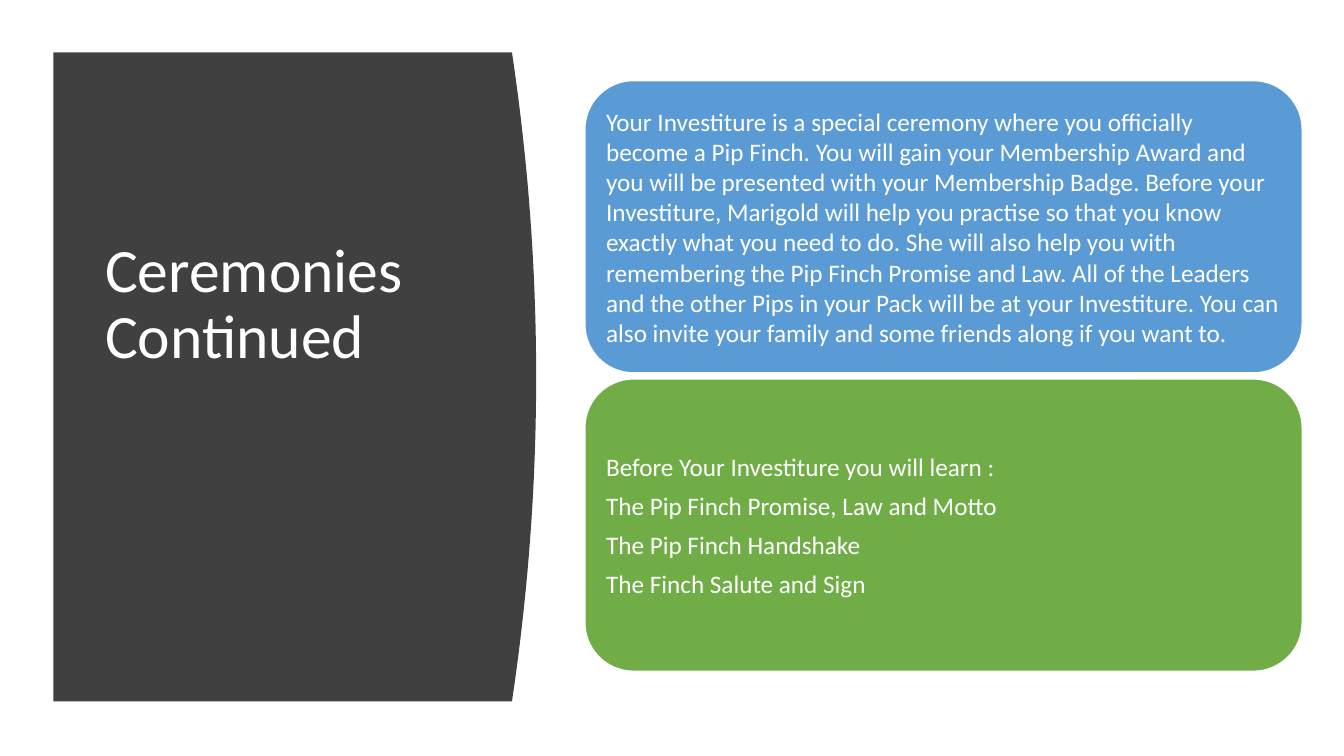
"""Build the "Ceremonies Continued" slide with a curved title panel and two cards."""
from pptx import Presentation
from pptx.dml.color import RGBColor
from pptx.enum.shapes import MSO_SHAPE
from pptx.enum.text import MSO_ANCHOR, MSO_AUTO_SIZE, PP_ALIGN
from pptx.util import Pt

ROUNDED = MSO_SHAPE.ROUNDED_RECTANGLE
MIDDLE = MSO_ANCHOR.MIDDLE
LEFT = PP_ALIGN.LEFT
NO_AUTOFIT = MSO_AUTO_SIZE.NONE

FONT = "Calibri"
WHITE = "FFFFFF"
PANEL_GREY = "404040"

CARDS = [
    ("5B9BD5", [
        "Your Investiture is a special ceremony where you officially become a Pip Finch. "
        "You will gain your Membership Award and you will be presented with your "
        "Membership Badge. Before your Investiture, Marigold will help you practise so "
        "that you know exactly what you need to do. She will also help you with "
        "remembering the Pip Finch Promise and Law. All of the Leaders and the other "
        "Pips in your Pack will be at your Investiture. You can also invite your family "
        "and some friends along if you want to.",
    ]),
    ("70AD47", [
        "Before Your Investiture you will learn :",
        "The Pip Finch Promise, Law and Motto",
        "The Pip Finch Handshake",
        "The Finch Salute and Sign",
    ]),
]


def paint(colour_format, hex_colour):
    colour_format.rgb = RGBColor.from_string(hex_colour)


def add_run(paragraph, text, size):
    run = paragraph.add_run()
    run.text = text
    run.font.name = FONT
    run.font.size = Pt(size)
    paint(run.font.color, WHITE)


deck = Presentation()
deck.slide_width, deck.slide_height = Pt(960), Pt(540)
slide = deck.slides.add_slide(deck.slide_layouts[5])

panel_left, panel_top, panel_bottom = 38.2, 37.4, 501.1
panel_right, bulge, curve_steps = 383, 17.3, 40
panel_middle = (panel_top + panel_bottom) / 2
half_height = panel_bottom - panel_middle

curve = []
for step in range(curve_steps + 1):
    offset = 2 * step / curve_steps - 1
    curve.append((Pt(panel_right - bulge * offset ** 2),
                  Pt(panel_middle + half_height * offset)))

outline = slide.shapes.build_freeform(Pt(panel_left), Pt(panel_top))
outline.add_line_segments(curve + [(Pt(panel_left), Pt(panel_bottom))], close=True)
panel = outline.convert_to_shape()
panel.shadow.inherit = False
panel.fill.solid()
paint(panel.fill.fore_color, PANEL_GREY)
panel.line.fill.background()

title = slide.shapes.title
title.left, title.top, title.width, title.height = Pt(67.9), Pt(80), Pt(269.4), Pt(377.2)
title.element.getparent().append(title.element)
title_frame = title.text_frame
title_frame.auto_size = NO_AUTOFIT
title_frame.word_wrap = True
title_frame.vertical_anchor = MIDDLE
title_frame.margin_bottom = Pt(104.3)
heading = title_frame.paragraphs[0]
heading.alignment = LEFT
heading.line_spacing = 0.9
add_run(heading, "Ceremonies", 44)
heading.add_line_break()
add_run(heading, "Continued", 44)

card_left, card_top, card_width, card_height, card_gap = 417.8, 57.6, 512.4, 208.8, 4.3
for index, (card_colour, lines) in enumerate(CARDS):
    top = card_top + index * (card_height + card_gap)
    card = slide.shapes.add_shape(
        ROUNDED, Pt(card_left), Pt(top), Pt(card_width), Pt(card_height))
    card.shadow.inherit = False
    card.fill.solid()
    paint(card.fill.fore_color, card_colour)
    paint(card.line.color, WHITE)
    card.line.width = Pt(1)
    frame = card.text_frame
    frame.word_wrap = True
    frame.vertical_anchor = MIDDLE
    frame.margin_left = frame.margin_right = Pt(5)
    frame.margin_top = frame.margin_bottom = Pt(5)
    for number, line in enumerate(lines):
        paragraph = frame.add_paragraph() if number else frame.paragraphs[0]
        paragraph.alignment = LEFT
        paragraph.space_after = Pt(6.3)
        add_run(paragraph, line, 18)

deck.save("out.pptx")
